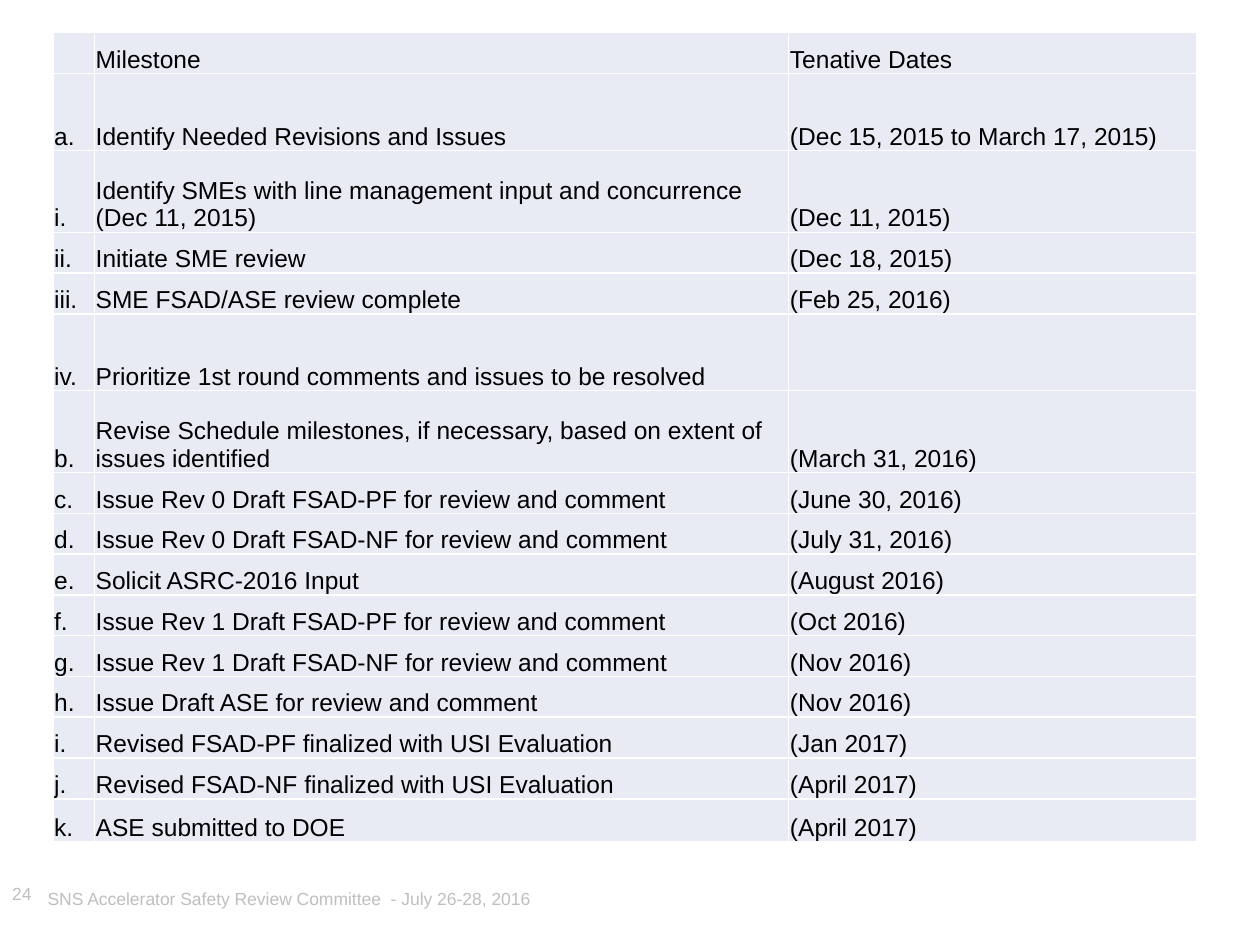
from dataclasses import dataclass

from lxml import etree
from pptx import Presentation
from pptx import util as u
from pptx.dml.color import RGBColor
from pptx.enum import text
from pptx.oxml.ns import qn


@dataclass(frozen=True)
class Theme:
    font: str = "Arial"
    table_size: int = 14
    footer_size: int = 10
    ink: str = "000000"
    muted: str = "BFBFBF"
    cell: str = "E8EBF4"
    border: str = "FFFFFF"
    border_width: int = 1


@dataclass(frozen=True)
class Milestone:
    label: str
    task: str
    dates: str
    height: float | None = None  # None: an equal share of the remaining height


@dataclass(frozen=True)
class Footer:
    words: str
    left: float
    top: float
    width: float
    height: float
    inset: tuple[float, float]  # horizontal, vertical
    align: text.PP_ALIGN
    anchor: text.MSO_ANCHOR
    line_spacing: float = 1.0


THEME = Theme()
TABLE_LEFT, TABLE_TOP, TABLE_HEIGHT = 0.42, 0.26, 6.42
COLUMN_WIDTHS = (0.33, 5.51, 3.24)
SPACED, WRAPPED, LAST = 0.61, 0.65, 0.34

MILESTONES = [
    Milestone("", "Milestone", "Tenative Dates"),
    Milestone("a.", "Identify Needed Revisions and Issues",
              "(Dec 15, 2015 to March 17, 2015)", SPACED),
    Milestone("i.", "Identify SMEs with line management input and concurrence (Dec 11, 2015)",
              "(Dec 11, 2015)", WRAPPED),
    Milestone("ii.", "Initiate SME review", "(Dec 18, 2015)"),
    Milestone("iii.", "SME FSAD/ASE review complete", "(Feb 25, 2016)"),
    Milestone("iv.", "Prioritize 1st round comments and issues to be resolved", "", SPACED),
    Milestone("b.", "Revise Schedule milestones, if necessary, based on extent of  issues identified",
              "(March 31, 2016)", WRAPPED),
    Milestone("c.", "Issue Rev 0 Draft FSAD-PF for review and comment", "(June 30, 2016)"),
    Milestone("d.", "Issue Rev 0 Draft FSAD-NF for review and comment", "(July 31, 2016)"),
    Milestone("e.", "Solicit ASRC-2016 Input", "(August 2016)"),
    Milestone("f.", "Issue Rev 1 Draft FSAD-PF for review and comment", "(Oct 2016)"),
    Milestone("g.", "Issue Rev 1 Draft FSAD-NF for review and comment", "(Nov 2016)"),
    Milestone("h.", "Issue Draft ASE for review and comment", "(Nov 2016)"),
    Milestone("i.", "Revised FSAD-PF finalized with USI Evaluation", "(Jan 2017)"),
    Milestone("j.", "Revised FSAD-NF finalized with USI Evaluation", "(April 2017)"),
    Milestone("k.", "ASE submitted to DOE", "(April 2017)", LAST),
]

FOOTERS = [
    Footer("24", 0.02, 7.03, 0.23, 0.17, (0, 0),
           text.PP_ALIGN.RIGHT, text.MSO_ANCHOR.TOP, 0.9),
    Footer("SNS Accelerator Safety Review Committee  - July 26-28, 2016",
           0.28, 7.01, 4.8, 0.24, (0.1, 0.05),
           text.PP_ALIGN.LEFT, text.MSO_ANCHOR.MIDDLE),
]


def style_runs(paragraph, size: int, color: str) -> None:
    for run in paragraph.runs:
        run.font.name = THEME.font
        run.font.size = u.Pt(size)
        run.font.color.rgb = RGBColor.from_string(color)


def set_borders(cell) -> None:
    properties = cell._tc.get_or_add_tcPr()
    for position, side in enumerate(("lnL", "lnR", "lnT", "lnB")):
        line = etree.Element(qn(f"a:{side}"), w=str(u.Pt(THEME.border_width)))
        fill = etree.SubElement(line, qn("a:solidFill"))
        etree.SubElement(fill, qn("a:srgbClr"), val=THEME.border)
        properties.insert(position, line)


def fill_cell(cell, words: str) -> None:
    cell.text_frame.text = words
    cell.vertical_anchor = text.MSO_ANCHOR.BOTTOM
    cell.margin_left = cell.margin_right = cell.margin_top = u.Inches(0.01)
    cell.margin_bottom = 0
    cell.fill.solid()
    cell.fill.fore_color.rgb = RGBColor.from_string(THEME.cell)
    set_borders(cell)
    style_runs(cell.text_frame.paragraphs[0], THEME.table_size, THEME.ink)


def add_schedule(slide, milestones: list[Milestone]) -> None:
    fixed = [m.height for m in milestones if m.height is not None]
    single = (TABLE_HEIGHT - sum(fixed)) / (len(milestones) - len(fixed))
    schedule = slide.shapes.add_table(
        len(milestones), len(COLUMN_WIDTHS), u.Inches(TABLE_LEFT), u.Inches(TABLE_TOP),
        u.Inches(sum(COLUMN_WIDTHS)), u.Inches(TABLE_HEIGHT)).table
    schedule.first_row = schedule.horz_banding = False
    for column, width in zip(schedule.columns, COLUMN_WIDTHS):
        column.width = u.Inches(width)
    for row, milestone in zip(schedule.rows, milestones):
        row.height = u.Inches(milestone.height or single)
        for cell, words in zip(row.cells, (milestone.label, milestone.task, milestone.dates)):
            fill_cell(cell, words)


def add_footer(slide, footer: Footer) -> None:
    frame = slide.shapes.add_textbox(
        u.Inches(footer.left), u.Inches(footer.top),
        u.Inches(footer.width), u.Inches(footer.height)).text_frame
    frame.text = footer.words
    frame.word_wrap = True
    frame.vertical_anchor = footer.anchor
    frame.margin_left = frame.margin_right = u.Inches(footer.inset[0])
    frame.margin_top = frame.margin_bottom = u.Inches(footer.inset[1])
    paragraph = frame.paragraphs[0]
    paragraph.alignment = footer.align
    paragraph.line_spacing = footer.line_spacing
    style_runs(paragraph, THEME.footer_size, THEME.muted)


def main() -> None:
    deck = Presentation()
    deck.slide_width, deck.slide_height = u.Inches(10), u.Inches(7.5)
    slide = deck.slides.add_slide(deck.slide_layouts[6])

    # Page number and meeting line
    for footer in FOOTERS:
        add_footer(slide, footer)

    # Milestone schedule
    add_schedule(slide, MILESTONES)

    deck.save("out.pptx")


if __name__ == "__main__":
    main()
